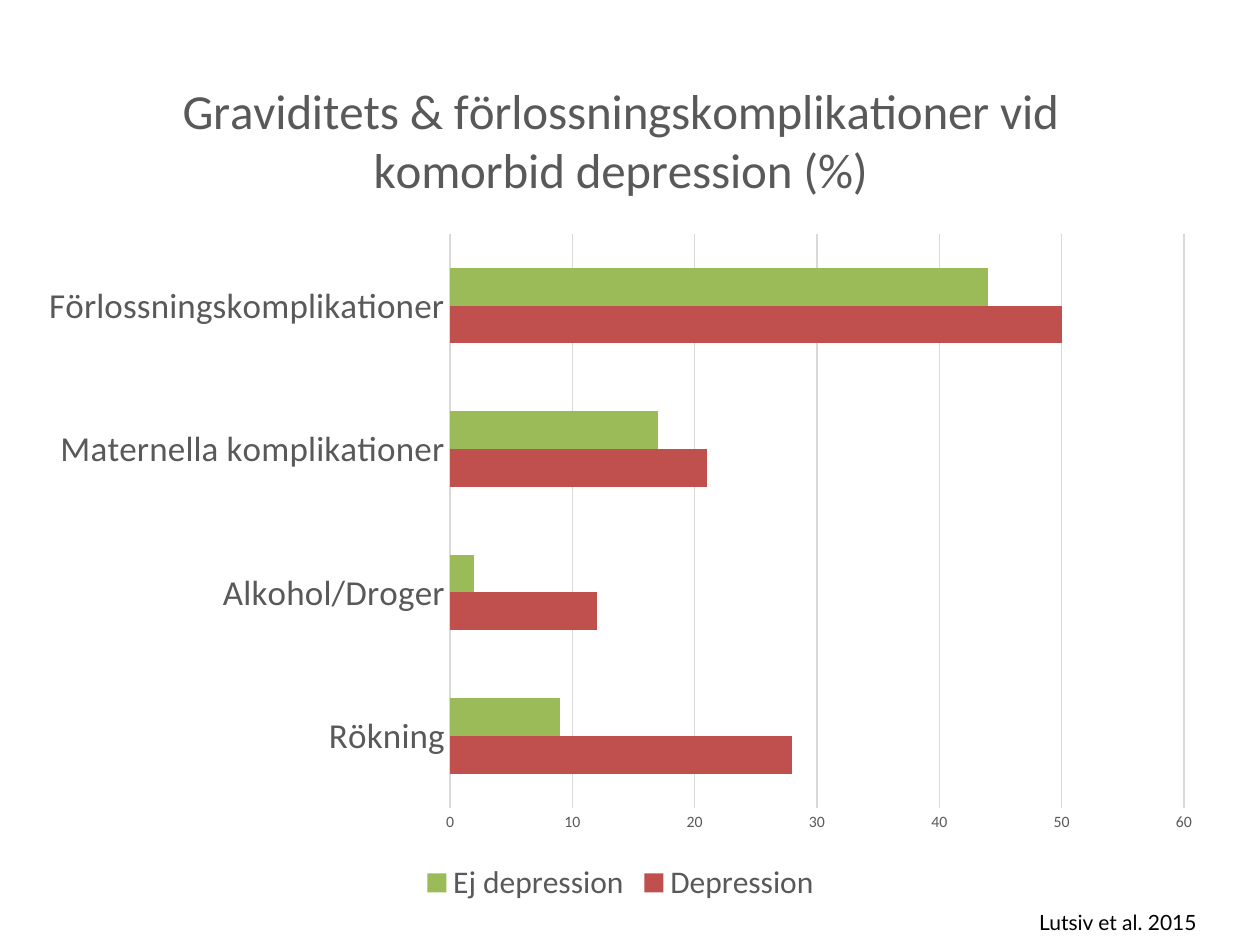
from dataclasses import dataclass

from pptx import Presentation
from pptx.chart.data import CategoryChartData
from pptx.dml.color import RGBColor
from pptx.enum.chart import XL_CHART_TYPE, XL_LEGEND_POSITION, XL_TICK_MARK
from pptx.enum.text import MSO_AUTO_SIZE
from pptx.util import Cm, Pt


@dataclass(frozen=True)
class Theme:
    chart_font: str = "Calibri"
    source_font: str = "Lato"
    text: str = "595959"
    source: str = "000000"
    grid: str = "D9D9D9"
    title_size: int = 28
    category_size: int = 20
    legend_size: int = 18
    source_size: int = 12
    value_size: int = 9
    line_width: float = 0.75


@dataclass(frozen=True)
class Group:
    name: str
    values: tuple[int, ...]
    color: str


THEME = Theme()
TITLE = "Graviditets & förlossningskomplikationer vid komorbid depression (%)"
CATEGORIES = (
    "Rökning",
    "Alkohol/Droger",
    "Maternella komplikationer",
    "Förlossningskomplikationer",
)
GROUPS = (
    Group("Depression", (28, 12, 21, 50), "C0504D"),
    Group("Ej depression", (9, 2, 17, 44), "9BBB59"),
)


def style_font(font, size: int, color: str = THEME.text, name: str = THEME.chart_font) -> None:
    for attribute, value in {"name": name, "size": Pt(size), "bold": False}.items():
        setattr(font, attribute, value)
    font.color.rgb = RGBColor.from_string(color)


def style_line(line) -> None:
    line.color.rgb = RGBColor.from_string(THEME.grid)
    line.width = Pt(THEME.line_width)


def style_axis(axis, size: int, formats: dict) -> None:
    for attribute, value in formats.items():
        setattr(axis, attribute, value)
    style_font(axis.tick_labels.font, size)


def style_title(chart) -> None:
    chart.has_title = True
    paragraph = chart.chart_title.text_frame.paragraphs[0]
    run = paragraph.add_run()
    run.text = TITLE
    style_font(run.font, THEME.title_size)
    chart.chart_title.include_in_layout = False


def style_legend(chart) -> None:
    chart.has_legend = True
    chart.legend.position = XL_LEGEND_POSITION.BOTTOM
    chart.legend.include_in_layout = False
    style_font(chart.legend.font, THEME.legend_size)


def add_complications_chart(slide) -> None:
    data = CategoryChartData()
    data.categories = CATEGORIES
    for group in GROUPS:
        data.add_series(group.name, group.values)
    chart = slide.shapes.add_chart(
        XL_CHART_TYPE.BAR_CLUSTERED, Cm(0.51), Cm(0.91), Cm(24), Cm(17.4), data
    ).chart
    style_font(chart.font, 10, THEME.source)
    style_title(chart)
    style_legend(chart)

    ticks = {
        "major_tick_mark": XL_TICK_MARK.NONE,
        "minor_tick_mark": XL_TICK_MARK.NONE,
    }
    style_axis(chart.category_axis, THEME.category_size, ticks)
    style_line(chart.category_axis.format.line)
    scale = {"minimum_scale": 0, "maximum_scale": 60, "major_unit": 10}
    style_axis(chart.value_axis, THEME.value_size, ticks | scale)
    chart.value_axis.format.line.fill.background()
    style_line(chart.value_axis.major_gridlines.format.line)

    plot = chart.plots[0]
    for attribute, value in {"gap_width": 182, "overlap": 0, "vary_by_categories": False}.items():
        setattr(plot, attribute, value)
    for series, group in zip(plot.series, GROUPS):
        series.format.fill.solid()
        series.format.fill.fore_color.rgb = RGBColor.from_string(group.color)


def add_source(slide) -> None:
    shape = slide.shapes.add_textbox(Cm(20.7), Cm(18.21), Cm(6.4), Cm(0.77))
    frame = shape.text_frame
    for attribute, value in {"word_wrap": True, "auto_size": MSO_AUTO_SIZE.SHAPE_TO_FIT_TEXT}.items():
        setattr(frame, attribute, value)
    run = frame.paragraphs[0].add_run()
    run.text = "Lutsiv et al. 2015"
    style_font(run.font, THEME.source_size, THEME.source, THEME.source_font)


def main() -> None:
    presentation = Presentation()
    presentation.slide_width, presentation.slide_height = Cm(25.4), Cm(19.05)
    slide = presentation.slides.add_slide(presentation.slide_layouts[6])
    add_complications_chart(slide)
    add_source(slide)
    presentation.save("out.pptx")


if __name__ == "__main__":
    main()
